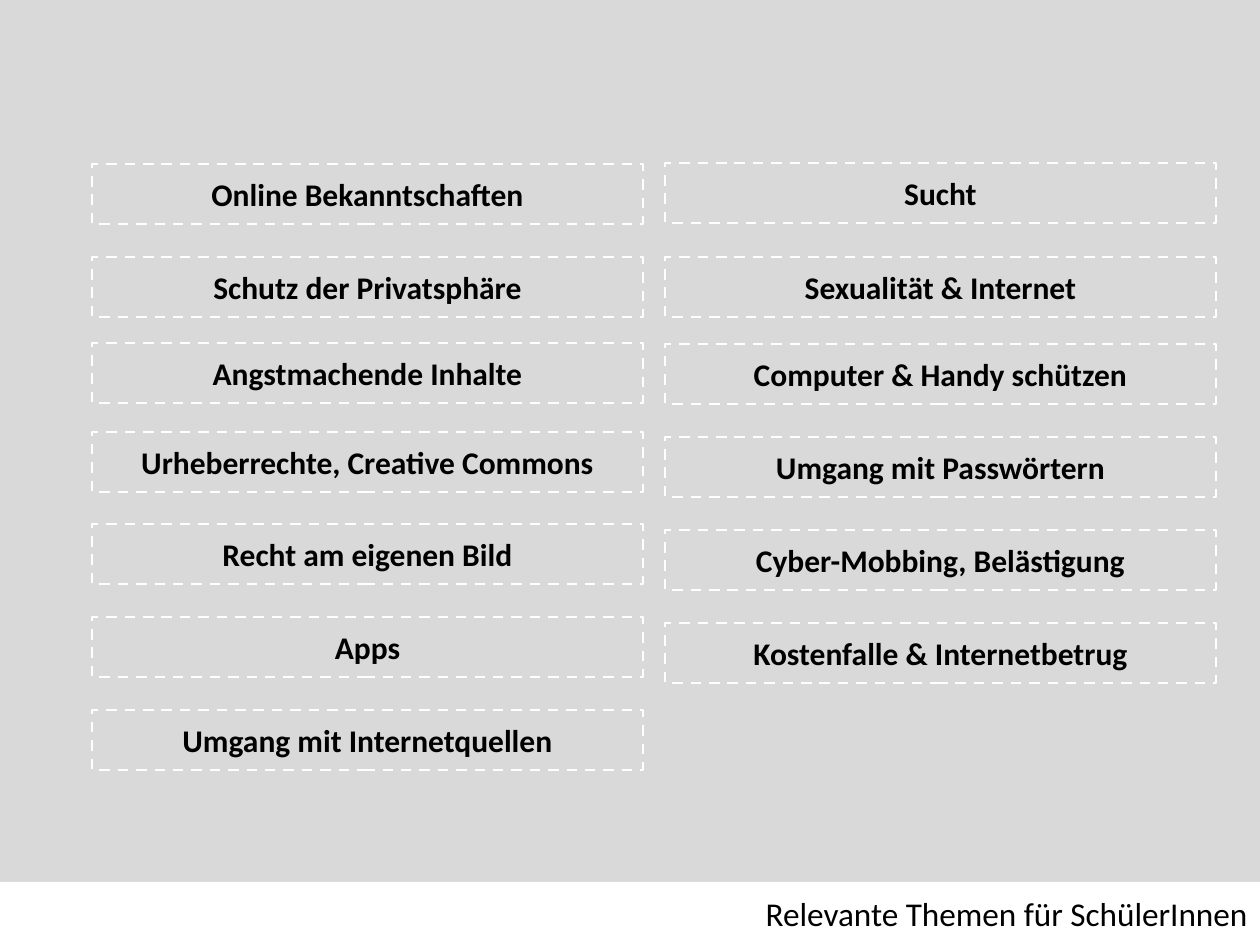
import pptx
import pptx.dml.color
import pptx.enum.dml
import pptx.enum.shapes
import pptx.enum.text
import pptx.util

PX = 9144000 // 1260
PAGE_WIDTH, PAGE_HEIGHT = 1260, 945
FOOTER_TOP = 882
TOPIC_WIDTH, TOPIC_HEIGHT = 551, 60
FONT = "Calibri"

# Left edge of each column, then the top and wording of its topics
COLUMNS = [
    (92, [
        (164, "Online Bekanntschaften"),
        (257, "Schutz der Privatsphäre"),
        (343, "Angstmachende Inhalte"),
        (432, "Urheberrechte, Creative Commons"),
        (524, "Recht am eigenen Bild"),
        (617, "Apps"),
        (710, "Umgang mit Internetquellen"),
    ]),
    (665, [
        (163, "Sucht"),
        (257, "Sexualität & Internet"),
        (344, "Computer & Handy schützen"),
        (437, "Umgang mit Passwörtern"),
        (530, "Cyber-Mobbing, Belästigung"),
        (623, "Kostenfalle & Internetbetrug"),
    ]),
]


def px(*lengths):
    return [pptx.util.Emu(length * PX) for length in lengths]


def color(value):
    return pptx.dml.color.RGBColor.from_string(value)


def write(shape, text, size, alignment, bold=False):
    frame = shape.text_frame
    frame.word_wrap = True
    frame.text = text
    paragraph = frame.paragraphs[0]
    paragraph.alignment = alignment
    font = paragraph.runs[0].font
    font.name = FONT
    font.size = pptx.util.Pt(size)
    font.bold = bold
    font.color.rgb = color("000000")


def add_rectangle(page, *bounds):
    box = page.shapes.add_shape(pptx.enum.shapes.MSO_SHAPE.RECTANGLE, *px(*bounds))
    box.shadow.inherit = False
    return box


def add_footer(page, text):
    band = add_rectangle(page, 0, FOOTER_TOP, PAGE_WIDTH, PAGE_HEIGHT - FOOTER_TOP)
    band.fill.solid()
    band.fill.fore_color.rgb = color("FFFFFF")
    band.line.fill.background()
    title = page.shapes.add_textbox(*px(571, 887, 689, 53))
    write(title, text, 19, pptx.enum.text.PP_ALIGN.RIGHT)
    title.text_frame.auto_size = pptx.enum.text.MSO_AUTO_SIZE.SHAPE_TO_FIT_TEXT


def add_topic(page, left, top, text):
    box = add_rectangle(page, left, top, TOPIC_WIDTH, TOPIC_HEIGHT)
    box.fill.background()
    box.line.color.rgb = color("FFFFFF")
    box.line.width = pptx.util.Pt(1.5)
    box.line.dash_style = pptx.enum.dml.MSO_LINE.DASH
    write(box, text, 18, pptx.enum.text.PP_ALIGN.CENTER, bold=True)
    box.text_frame.vertical_anchor = pptx.enum.text.MSO_ANCHOR.MIDDLE


def main():
    deck = pptx.Presentation()
    deck.slide_width, deck.slide_height = px(PAGE_WIDTH, PAGE_HEIGHT)
    page = deck.slides.add_slide(deck.slide_layouts[6])
    page.background.fill.solid()
    page.background.fill.fore_color.rgb = color("D9D9D9")
    add_footer(page, "Relevante Themen für SchülerInnen")
    for left, topics in COLUMNS:
        for top, text in topics:
            add_topic(page, left, top, text)
    deck.save("out.pptx")


if __name__ == "__main__":
    main()
